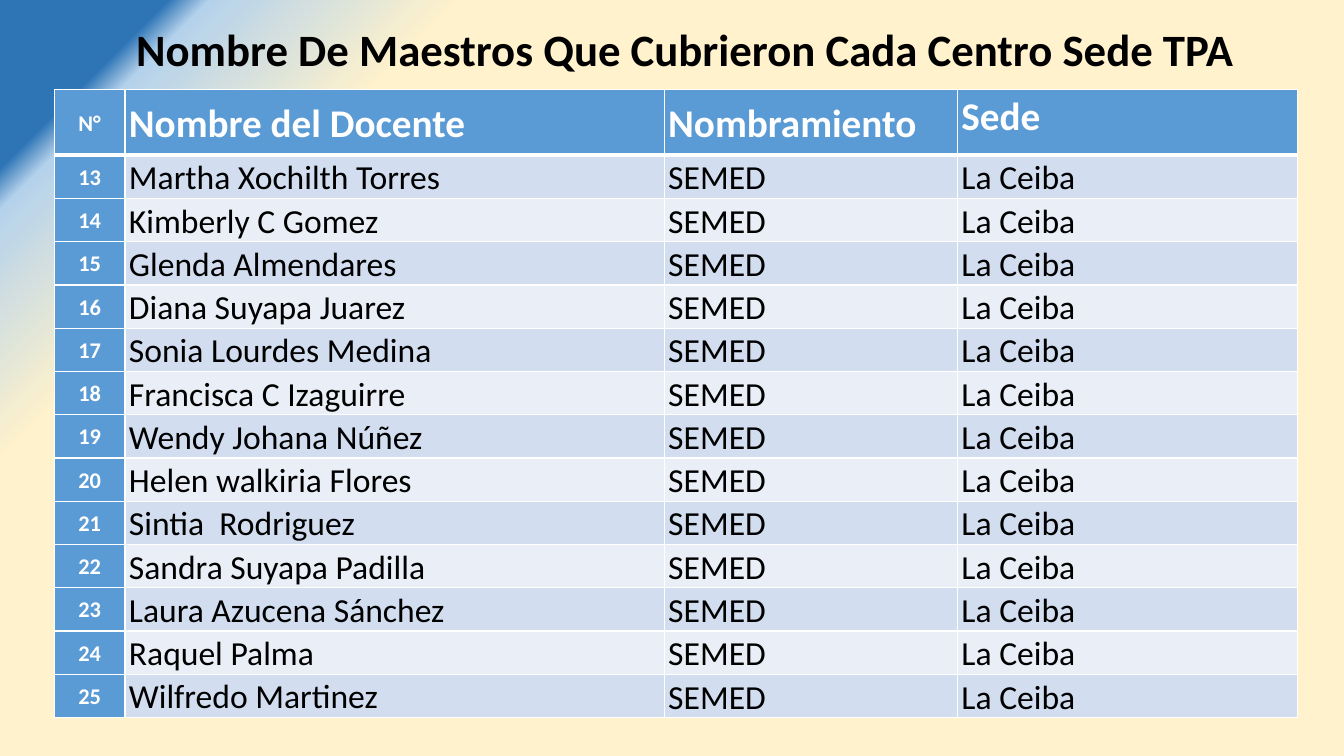
from dataclasses import dataclass

from pptx import Presentation
from pptx.dml.color import RGBColor
from pptx.enum.text import MSO_ANCHOR, MSO_AUTO_SIZE, PP_ALIGN
from pptx.oxml import parse_xml
from pptx.oxml.ns import nsdecls
from pptx.util import Cm, Pt


@dataclass(frozen=True)
class Theme:
    font: str = "Calibri"
    black: str = "000000"
    white: str = "FFFFFF"
    header: str = "5B9BD5"
    bands: tuple = ("D2DEEF", "EAEFF7")
    backdrop: tuple = ((0, "FFF2CC"), (78, "FFF2CC"), (90, "B5D2EC"), (92, "2E75B6"))
    title_size: int = 32
    heading_size: int = 28
    body_size: int = 24
    number_size: int = 16
    thin_line: int = 1
    thick_line: int = 3


theme = Theme()

HEADINGS = ("N°", "Nombre del Docente", "Nombramiento", "Sede")
FIRST_NUMBER = 13
TEACHERS = (
    "Martha Xochilth Torres",
    "Kimberly C Gomez",
    "Glenda Almendares",
    "Diana Suyapa Juarez",
    "Sonia Lourdes Medina",
    "Francisca C Izaguirre",
    "Wendy Johana Núñez",
    "Helen walkiria Flores",
    "Sintia  Rodriguez",
    "Sandra Suyapa Padilla",
    "Laura Azucena Sánchez",
    "Raquel Palma",
    "Wilfredo Martinez",
)
COLUMN_WIDTHS = (1.78, 13.59, 7.39, 8.56)
HEADER_HEIGHT, ROW_HEIGHT = 1.65, 1.09


def write(para, text, size, color, bold):
    span = para.add_run()
    span.text = text
    formats = {"name": theme.font, "size": Pt(size), "bold": bold}
    for name, value in formats.items():
        setattr(span.font, name, value)
    span.font.color.rgb = RGBColor.from_string(color)


def set_borders(cell, top, bottom):
    """Draw white cell edges; top and bottom are widths in points."""
    widths = {"L": theme.thin_line, "R": theme.thin_line, "T": top, "B": bottom}
    properties = cell._tc.get_or_add_tcPr()
    for position, (side, width) in enumerate(widths.items()):
        properties.insert(position, parse_xml(
            f'<a:ln{side} {nsdecls("a")} w="{Pt(width)}"><a:solidFill>'
            f'<a:srgbClr val="{theme.white}"/></a:solidFill></a:ln{side}>'))


deck = Presentation()
deck.slide_width, deck.slide_height = Cm(33.87), Cm(19.05)
page = deck.slides.add_slide(deck.slide_layouts[6])

# Radial background centred on the bottom right corner
stops = "".join(f'<a:gs pos="{percent * 1000}"><a:srgbClr val="{color}"/></a:gs>'
                for percent, color in theme.backdrop)
page.element.cSld.insert(0, parse_xml(
    f'<p:bg {nsdecls("p", "a")}><p:bgPr><a:gradFill rotWithShape="1">'
    f'<a:gsLst>{stops}</a:gsLst><a:path path="circle">'
    '<a:fillToRect l="100000" t="100000"/></a:path></a:gradFill>'
    '<a:effectLst/></p:bgPr></p:bg>'))

title_box = page.shapes.add_textbox(Cm(2.26), Cm(0.43), Cm(30.28), Cm(1.62))
title_frame = title_box.text_frame
title_frame.word_wrap = True
title_frame.auto_size = MSO_AUTO_SIZE.SHAPE_TO_FIT_TEXT
title = title_frame.paragraphs[0]
title.alignment = PP_ALIGN.CENTER
write(title, "Nombre De Maestros Que Cubrieron Cada Centro Sede TPA ",
      theme.title_size, theme.black, True)

# Table of teachers
rows = [HEADINGS] + [(str(number), teacher, "SEMED", "La Ceiba")
                     for number, teacher in enumerate(TEACHERS, FIRST_NUMBER)]
table = page.shapes.add_table(
    len(rows), len(HEADINGS), Cm(1.37), Cm(2.26), Cm(sum(COLUMN_WIDTHS)),
    Cm(HEADER_HEIGHT + ROW_HEIGHT * len(TEACHERS))).table
table.first_col = True
for column, width in zip(table.columns, COLUMN_WIDTHS):
    column.width = Cm(width)

for row_index, values in enumerate(rows):
    is_header = row_index == 0
    table.rows[row_index].height = Cm(HEADER_HEIGHT if is_header else ROW_HEIGHT)
    for column_index, text in enumerate(values):
        is_number = column_index == 0
        is_strong = is_header or is_number
        if is_number:
            size = theme.number_size
        else:
            size = theme.heading_size if is_header else theme.body_size
        if column_index == 3:
            anchor = MSO_ANCHOR.TOP
        elif column_index == 1 and not is_header:
            anchor = MSO_ANCHOR.BOTTOM
        else:
            anchor = MSO_ANCHOR.MIDDLE

        cell = table.cell(row_index, column_index)
        formats = {"margin_left": Cm(0.1), "margin_right": Cm(0.1),
                   "margin_top": 0, "margin_bottom": 0, "vertical_anchor": anchor}
        for name, value in formats.items():
            setattr(cell, name, value)
        cell.fill.solid()
        cell.fill.fore_color.rgb = RGBColor.from_string(
            theme.header if is_strong else theme.bands[(row_index - 1) % 2])
        set_borders(cell,
                    top=theme.thick_line if row_index == 1 else theme.thin_line,
                    bottom=theme.thick_line if is_header else theme.thin_line)

        para = cell.text_frame.paragraphs[0]
        para.alignment = PP_ALIGN.CENTER if is_number else PP_ALIGN.LEFT
        para.line_spacing = 1.07
        write(para, text, size, theme.white if is_strong else theme.black, is_strong)

deck.save("out.pptx")
